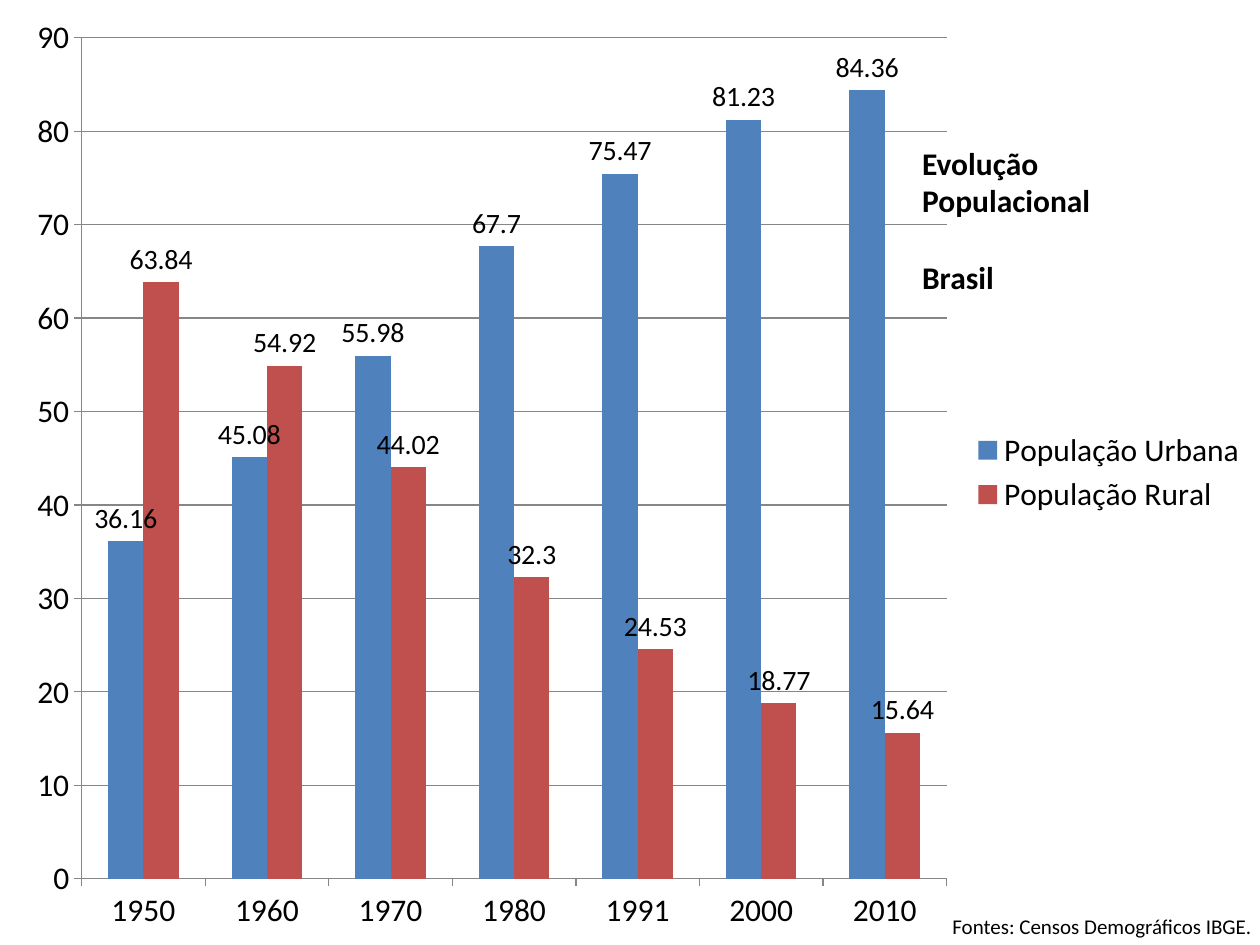
import pptx
import pptx.util
import pptx.chart.data
import pptx.dml.color
import pptx.enum.chart
import pptx.enum.text
import pptx.oxml
import pptx.oxml.ns
from dataclasses import dataclass

Cm, Pt = pptx.util.Cm, pptx.util.Pt
RGB = pptx.dml.color.RGBColor.from_string
ENUM = pptx.enum.chart


@dataclass(frozen=True)
class Theme:
    face: str = "Calibri"
    ink: str = "000000"
    grid: str = "868686"
    main: int = 18
    label: int = 16
    note: int = 12


THEME = Theme()
YEARS = ["1950", "1960", "1970", "1980", "1991", "2000", "2010"]
SERIES = [
    ("População Urbana", "4F81BD", [36.16, 45.08, 55.98, 67.7, 75.47, 81.23, 84.36]),
    ("População Rural", "C0504D", [63.84, 54.92, 44.02, 32.3, 24.53, 18.77, 15.64]),
]
TITLE = ["Evolução", "Populacional", "Brasil"]
SOURCE = ["Fontes: Censos Demográficos IBGE."]
SIZE = (25.4, 19.05)
CHART_AT = (0.13, 0, 25.27, 19.05)
TITLE_AT = (18.34, 2.77, 3.94, 3.33)
SOURCE_AT = (18.95, 18.29, 6.63, 0.76)
PLOT = {"x": 0.06, "y": 0.04, "w": 0.69, "h": 0.89}


def style(font, size, bold=False):
    font.name, font.size, font.bold = THEME.face, Pt(size), bold
    font.color.rgb = RGB(THEME.ink)


def add_text(slide, lines, at, size, bold=False, gaps=None):
    """Add a text box; gaps maps a line number to its space before in points."""
    frame = slide.shapes.add_textbox(*map(Cm, at)).text_frame
    frame.word_wrap = False
    frame.auto_size = pptx.enum.text.MSO_AUTO_SIZE.SHAPE_TO_FIT_TEXT
    for i, line in enumerate(lines):
        para = frame.paragraphs[0] if i == 0 else frame.add_paragraph()
        run = para.add_run()
        run.text = line
        style(run.font, size, bold)
        if gaps and i in gaps:
            para.space_before = Pt(gaps[i])


def set_plot(chart):
    """Fix the inner plot area at the shares of the chart given in PLOT."""
    parts = "".join(f'<c:{k}Mode val="edge"/>' for k in "xy")
    parts += "".join(f'<c:{k} val="{v}"/>' for k, v in PLOT.items())
    area = chart.element.chart.plotArea
    for old in area.findall(pptx.oxml.ns.qn("c:layout")):
        area.remove(old)
    area.insert(0, pptx.oxml.parse_xml(
        f'<c:layout {pptx.oxml.ns.nsdecls("c")}><c:manualLayout>'
        f'<c:layoutTarget val="inner"/>{parts}</c:manualLayout></c:layout>'))


def set_line(line):
    line.color.rgb = RGB(THEME.grid)
    line.width = Pt(0.75)


def add_chart(slide):
    data = pptx.chart.data.CategoryChartData()
    data.categories = YEARS
    for name, _, vals in SERIES:
        data.add_series(name, vals)
    kind = ENUM.XL_CHART_TYPE.COLUMN_CLUSTERED
    chart = slide.shapes.add_chart(kind, *map(Cm, CHART_AT), data).chart
    chart.has_title = False
    style(chart.font, THEME.main)
    set_plot(chart)

    chart.has_legend = True
    chart.legend.position = ENUM.XL_LEGEND_POSITION.RIGHT
    chart.legend.include_in_layout = False
    style(chart.legend.font, THEME.main)

    for axis in (chart.category_axis, chart.value_axis):
        axis.major_tick_mark = ENUM.XL_TICK_MARK.OUTSIDE
        axis.minor_tick_mark = ENUM.XL_TICK_MARK.NONE
        style(axis.tick_labels.font, THEME.main)
        set_line(axis.format.line)
    scale = chart.value_axis
    scale.minimum_scale, scale.maximum_scale, scale.major_unit = 0, 90, 10
    scale.has_major_gridlines = True
    set_line(scale.major_gridlines.format.line)

    plot = chart.plots[0]
    plot.vary_by_categories = False
    plot.gap_width, plot.overlap = 150, 0
    for bars, (_, color, _) in zip(plot.series, SERIES):
        bars.format.fill.solid()
        bars.format.fill.fore_color.rgb = RGB(color)
        bars.invert_if_negative = False
        labels = bars.data_labels
        labels.show_value = True
        labels.position = ENUM.XL_LABEL_POSITION.OUTSIDE_END
        style(labels.font, THEME.label)


def main():
    deck = pptx.Presentation()
    deck.slide_width, deck.slide_height = map(Cm, SIZE)
    slide = deck.slides.add_slide(deck.slide_layouts[6])
    add_chart(slide)
    add_text(slide, TITLE, TITLE_AT, THEME.main, bold=True, gaps={2: 22})
    add_text(slide, SOURCE, SOURCE_AT, THEME.note)
    deck.save("out.pptx")


if __name__ == "__main__":
    main()
